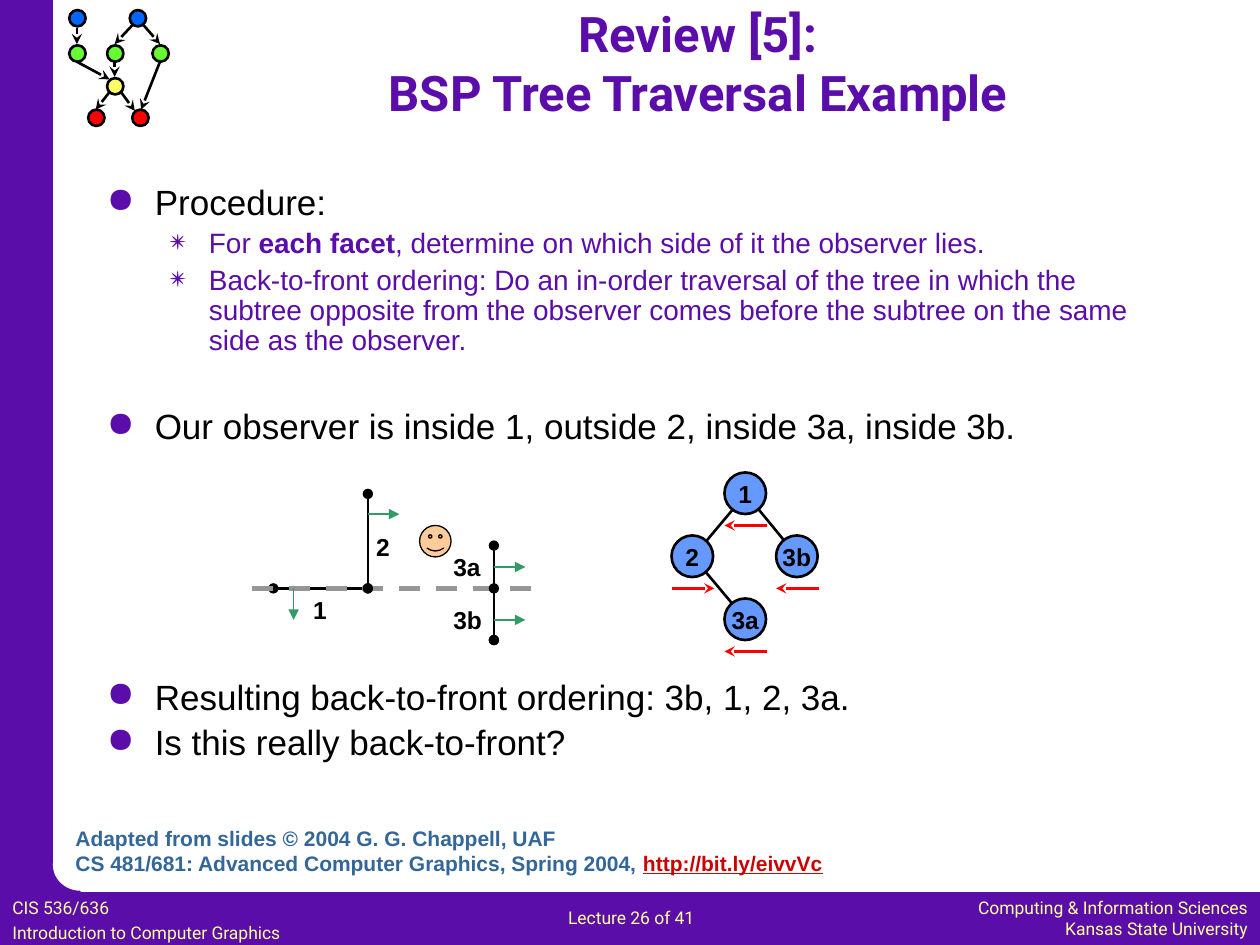
from pptx import Presentation
from pptx.dml.color import RGBColor
from pptx.enum.dml import MSO_LINE
from pptx.enum.shapes import MSO_CONNECTOR, MSO_SHAPE
from pptx.enum.text import MSO_ANCHOR, MSO_AUTO_SIZE, PP_ALIGN
from pptx.oxml.ns import qn
from pptx.util import Inches, Pt
from lxml.etree import SubElement

PURPLE = RGBColor(0x5B, 0x0D, 0xAA)
WHITE = RGBColor(0xFF, 0xFF, 0xFF)
BLACK = RGBColor(0, 0, 0)
CREAM = RGBColor(0xFF, 0xFF, 0x99)
GREEN = RGBColor(0x66, 0xFF, 0x33)
BLUE = RGBColor(0x00, 0x66, 0xFF)
YELLOW = RGBColor(0xFF, 0xFF, 0x66)
RED = RGBColor(0xFF, 0, 0)
NODE_BLUE = RGBColor(0x66, 0x99, 0xFF)
SKIN = RGBColor(0xFF, 0xCC, 0x99)
NORMAL_GREEN = RGBColor(0x33, 0x99, 0x66)
GRAY = RGBColor(0x96, 0x96, 0x96)
STEEL = RGBColor(0x33, 0x66, 0x99)
LINK_RED = RGBColor(0xCC, 0, 0)


def add_run(p, text, size, color, font="Arial", bold=False, underline=False):
    """Add one formatted run to a paragraph."""
    r = p.add_run()
    r.text = text
    r.font.name, r.font.size, r.font.bold = font, Pt(size), bold
    r.font.color.rgb = color
    if underline:
        r.font.underline = True
    return r


def add_shape(s, kind, x, y, w, h, fill, line=None, width=1.5):
    """Add a flat preset shape, outlined only when a line colour is given."""
    sp = s.shapes.add_shape(kind, Inches(x), Inches(y), Inches(w), Inches(h))
    sp.shadow.inherit = False
    sp.fill.solid()
    sp.fill.fore_color.rgb = fill
    if line is None:
        sp.line.fill.background()
    else:
        sp.line.color.rgb = line
        sp.line.width = Pt(width)
    return sp


def add_line(s, start, end, color=BLACK, width=1.5, head=None, tail=None, dash=None):
    """Add a straight line with optional end marks."""
    c = s.shapes.add_connector(MSO_CONNECTOR.STRAIGHT, *map(Inches, start + end))
    c.line.color.rgb = color
    c.line.width = Pt(width)
    if dash:
        c.line.dash_style = dash
    ln = c.line._get_or_add_ln()
    for tag, mark in (("a:headEnd", head), ("a:tailEnd", tail)):
        if mark:
            SubElement(ln, qn(tag)).set("type", mark)
    SubElement(c._element.spPr, qn("a:effectLst"))
    return c


def add_text(s, x, y, w, h, lines, size, color, font="Arial", bold=False,
             align=PP_ALIGN.LEFT, before=0):
    """Add a text box with one paragraph per line and return its frame."""
    tf = s.shapes.add_textbox(Inches(x), Inches(y), Inches(w), Inches(h)).text_frame
    tf.word_wrap = True
    for i, line in enumerate(lines):
        p = tf.add_paragraph() if i else tf.paragraphs[0]
        p.alignment = align
        if i and before:
            p.space_before = Pt(before)
        add_run(p, line, size, color, font, bold)
    return tf


def add_bullet(p, level, before):
    """Give a paragraph its indent, spacing and bullet."""
    margin, hang, char = ((0.38, 0.38, "●"), (0.81, 0.31, "✴"))[level]
    p.level = level
    p.line_spacing = 0.9
    if before:
        p.space_before = Pt(before)
    pPr = p._p.get_or_add_pPr()
    pPr.set("marL", str(Inches(margin)))
    pPr.set("indent", str(Inches(-hang)))
    clr = SubElement(SubElement(pPr, qn("a:buClr")), qn("a:srgbClr"))
    clr.set("val", str(PURPLE))
    SubElement(pPr, qn("a:buChar")).set("char", char)


def add_frame(s):
    """Draw the purple side and bottom bands with the rounded corner."""
    add_shape(s, MSO_SHAPE.RECTANGLE, 0, 7.08, 10, 0.42, PURPLE)
    add_shape(s, MSO_SHAPE.RECTANGLE, 0, 0, 0.42, 7.5, PURPLE)
    add_shape(s, MSO_SHAPE.RECTANGLE, 0.2, 6.85, 0.44, 0.44, PURPLE)
    add_shape(s, MSO_SHAPE.OVAL, 0.42, 6.66, 0.44, 0.41, WHITE)
    add_text(s, 7.18, 7.07, 2.82, 0.43,
             ["Computing & Information Sciences", "Kansas State University"],
             10, CREAM, "Roboto", align=PP_ALIGN.RIGHT)
    add_text(s, 0, 7.07, 2.95, 0.44,
             ["CIS 536/636", "Introduction to Computer Graphics"],
             10, CREAM, "Roboto", before=2)
    add_text(s, 4.41, 7.15, 1.52, 0.27, ["Lecture 26 of 41"], 10, CREAM, "Roboto")


def add_corner_graph(s):
    """Draw the small directed graph in the top left corner."""
    for x, y, color in ((0.55, 0.36, GREEN), (0.55, 0.08, BLUE), (0.85, 0.36, GREEN),
                        (1.03, 0.08, BLUE), (1.21, 0.36, GREEN), (0.85, 0.62, YELLOW),
                        (0.7, 0.87, RED), (1.05, 0.87, RED)):
        add_shape(s, MSO_SHAPE.OVAL, x, y, 0.13, 0.13, color, BLACK)
    for start, end in (((0.61, 0.22), (0.61, 0.35)), ((1.05, 0.2), (0.91, 0.35)),
                       ((1.14, 0.2), (1.27, 0.35)), ((0.61, 0.49), (0.87, 0.63)),
                       ((0.91, 0.49), (0.91, 0.61)), ((1.27, 0.49), (1.12, 0.87)),
                       ((0.96, 0.73), (1.07, 0.88)), ((0.87, 0.73), (0.76, 0.87))):
        add_line(s, start, end, tail="stealth")


def add_title(s):
    """Place and fill the title."""
    sp = s.shapes.title
    sp.left, sp.top, sp.width, sp.height = map(Inches, (1.25, 0.08, 8.58, 0.83))
    tf = sp.text_frame
    tf.auto_size = MSO_AUTO_SIZE.NONE
    tf.vertical_anchor = MSO_ANCHOR.MIDDLE
    for i, line in enumerate(("Review [5]:", "BSP Tree Traversal Example")):
        p = tf.add_paragraph() if i else tf.paragraphs[0]
        p.alignment = PP_ALIGN.CENTER
        add_run(p, line, 28, PURPLE, "Roboto", True)


def add_body(s):
    """Write the bulleted text, leaving room for the diagrams."""
    tf = s.shapes.add_textbox(*map(Inches, (0.75, 1.42, 8.69, 5.17))).text_frame
    tf.word_wrap = True
    items = (
        (0, 0, ["Procedure:"]),
        (1, 3.7, ["For ", "each facet", ", determine on which side of it the observer lies."]),
        (1, 3.7, ["Back-to-front ordering: Do an in-order traversal of the tree in which "
                  "the subtree opposite from the observer comes before the subtree on the "
                  "same side as the observer."]),
        (0, 30, ["Our observer is inside 1, outside 2, inside 3a, inside 3b."]),
        (0, 133, ["Resulting back-to-front ordering: 3b, 1, 2, 3a."]),
        (0, 4.6, ["Is this really back-to-front?"]),
    )
    for i, (level, before, texts) in enumerate(items):
        p = tf.add_paragraph() if i else tf.paragraphs[0]
        add_bullet(p, level, before)
        size, color = ((20, BLACK), (16, PURPLE))[level]
        for j, text in enumerate(texts):
            add_run(p, text, size, color, bold=j == 1)


def add_facets(s):
    """Draw the facets with their normals, labels and the observer."""
    ovals = {"head": "oval", "tail": "oval"}
    add_line(s, (2.17, 4.67), (2.92, 4.67), **ovals)
    add_line(s, (2, 4.67), (4.33, 4.67), GRAY, 3, dash=MSO_LINE.DASH)
    for x, top, bottom in ((2.92, 3.92, 4.67), (3.92, 4.33, 5.08), (3.92, 4.67, 5.08)):
        add_line(s, (x, top), (x, bottom), **ovals)
    for start, end in (((2.33, 4.67), (2.33, 4.92)), ((2.92, 4.08), (3.17, 4.08)),
                       ((3.92, 4.5), (4.17, 4.5)), ((3.92, 4.92), (4.17, 4.92))):
        add_line(s, start, end, NORMAL_GREEN, 0.75, tail="triangle")
    for text, x, y, w, align in (("1", 2.33, 4.67, 0.42, PP_ALIGN.CENTER),
                                 ("2", 2.83, 4.17, 0.42, PP_ALIGN.CENTER),
                                 ("3a", 3.5, 4.33, 0.5, PP_ALIGN.LEFT),
                                 ("3b", 3.5, 4.75, 0.5, PP_ALIGN.LEFT)):
        add_text(s, x, y, w, 0.33, [text], 14, BLACK, bold=True, align=align)
    face = add_shape(s, MSO_SHAPE.SMILEY_FACE, 3.33, 4.17, 0.25, 0.25, SKIN, BLACK, 0.75)
    face.adjustments[0] = 0.047


def add_tree(s):
    """Draw the BSP tree with an arrow under each node."""
    nodes = {"1": (5.92, 3.92), "2": (5.5, 4.42), "3a": (5.92, 4.92), "3b": (6.33, 4.42)}
    half = 0.17
    for parent, child in (("1", "2"), ("1", "3b"), ("2", "3a")):
        add_line(s, nodes[parent], nodes[child])
    for name, (x, y) in nodes.items():
        sp = add_shape(s, MSO_SHAPE.OVAL, x - half, y - half, 0.33, 0.33, NODE_BLUE, BLACK)
        tf = sp.text_frame
        tf.word_wrap = False
        tf.vertical_anchor = MSO_ANCHOR.MIDDLE
        tf.paragraphs[0].alignment = PP_ALIGN.CENTER
        add_run(tf.paragraphs[0], name, 14, BLACK, bold=True)
        side = half if name == "2" else -half
        add_line(s, (x - side, y + 0.25), (x + side, y + 0.25), RED, tail="stealth")


def main():
    """Build the slide and save it."""
    prs = Presentation()
    prs.slide_width, prs.slide_height = Inches(10), Inches(7.5)
    s = prs.slides.add_slide(prs.slide_layouts[5])
    add_frame(s)
    add_corner_graph(s)
    add_title(s)
    add_body(s)
    add_facets(s)
    add_tree(s)
    tf = add_text(s, 0.5, 6.5, 6.19, 0.5,
                  ["Adapted from slides © 2004 G. G. Chappell, UAF",
                   "CS 481/681: Advanced Computer Graphics, Spring 2004, "],
                  12, STEEL, bold=True)
    add_run(tf.paragraphs[1], "http://bit.ly/eivvVc", 12, LINK_RED, bold=True, underline=True)
    prs.save("out.pptx")


if __name__ == "__main__":
    main()
